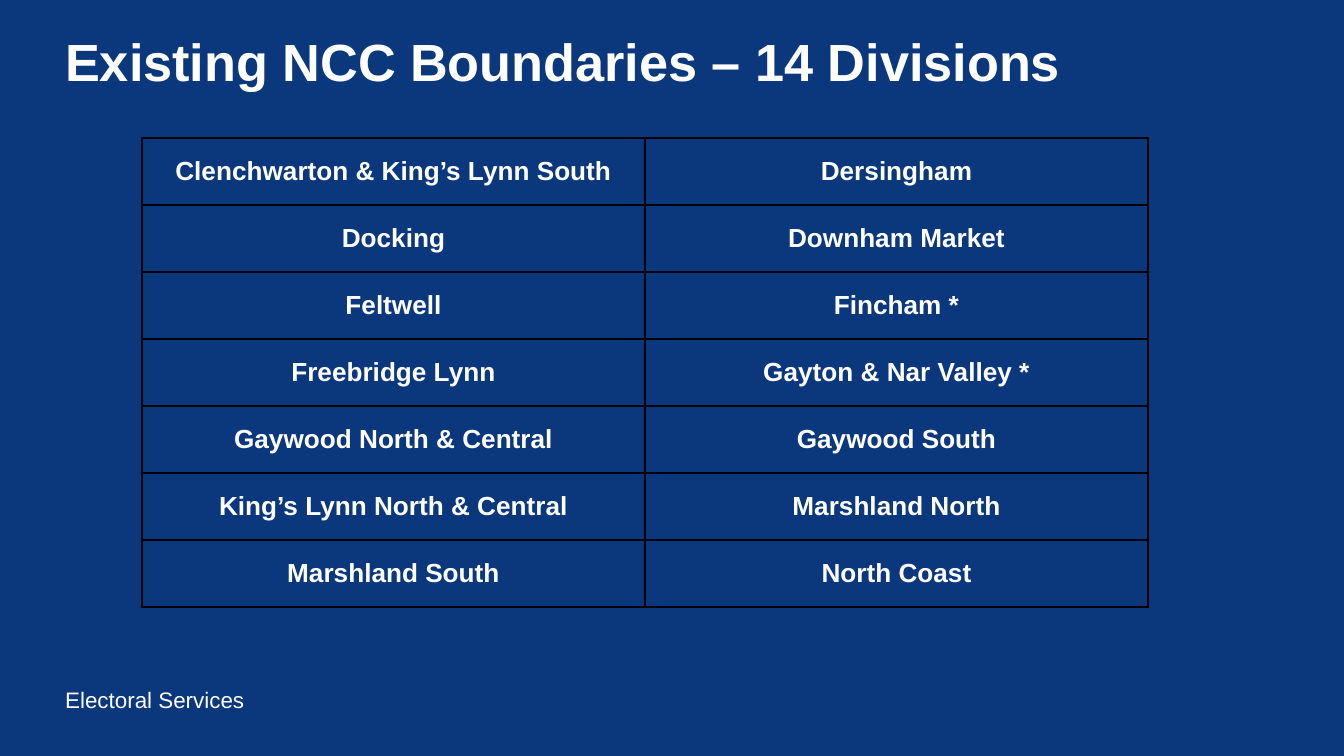
"""Build the slide listing the fourteen existing NCC divisions."""
from lxml import etree
from pptx import Presentation
from pptx.dml.color import RGBColor
from pptx.enum.text import MSO_ANCHOR as Anchor, PP_ALIGN as Align
from pptx.oxml.ns import qn
from pptx.util import Pt

PX = 914400 / 134.4
NAVY = RGBColor(0x0B, 0x38, 0x7C)
WHITE = RGBColor(0xFF, 0xFF, 0xFF)
BLACK = RGBColor(0, 0, 0)
ROWS = [
    ("Clenchwarton & King’s Lynn South", "Dersingham"),
    ("Docking", "Downham Market"),
    ("Feltwell", "Fincham *"),
    ("Freebridge Lynn", "Gayton & Nar Valley *"),
    ("Gaywood North & Central", "Gaywood South"),
    ("King’s Lynn North & Central", "Marshland North"),
    ("Marshland South", "North Coast"),
]


def px(*nums):
    return [round(num * PX) for num in nums]


def style(frame, text, size, bold):
    frame.text = text
    font = frame.paragraphs[0].runs[0].font
    font.name, font.size, font.bold = "Arial", Pt(size), bold
    font.color.rgb = WHITE


deck = Presentation()
deck.slide_width, deck.slide_height = px(1344, 756)
slide = deck.slides.add_slide(deck.slide_layouts[6])
slide.background.fill.solid()
slide.background.fill.fore_color.rgb = NAVY

for text, box, size, bold, anchor, space in [
    ("Existing NCC Boundaries – 14 Divisions", (52, 20, 1239, 90), 28, True, Anchor.MIDDLE, 0.9),
    ("Electoral Services", (52, 680, 258, 39), 12, False, Anchor.TOP, 1.0),
]:
    frame = slide.shapes.add_textbox(*px(*box)).text_frame
    frame.word_wrap = True
    frame.vertical_anchor = anchor
    style(frame, text, size, bold)
    frame.paragraphs[0].line_spacing = space

table = slide.shapes.add_table(len(ROWS), 2, *px(142, 138, 1006, 469)).table
table.first_row = table.horz_banding = False
for col in table.columns:
    col.width = px(503)[0]
for row, names in zip(table.rows, ROWS):
    row.height = px(67)[0]
    for cell, name in zip(row.cells, names):
        style(cell.text_frame, name, 14, True)
        cell.text_frame.paragraphs[0].alignment = Align.CENTER
        cell.vertical_anchor = Anchor.MIDDLE
        props = cell._tc.get_or_add_tcPr()
        for side in ("lnL", "lnR", "lnT", "lnB"):
            line = etree.SubElement(props, qn(f"a:{side}"), w=str(Pt(1)))
            fill = etree.SubElement(line, qn("a:solidFill"))
            etree.SubElement(fill, qn("a:srgbClr"), val=str(BLACK))
        cell.fill.background()

deck.save("out.pptx")
